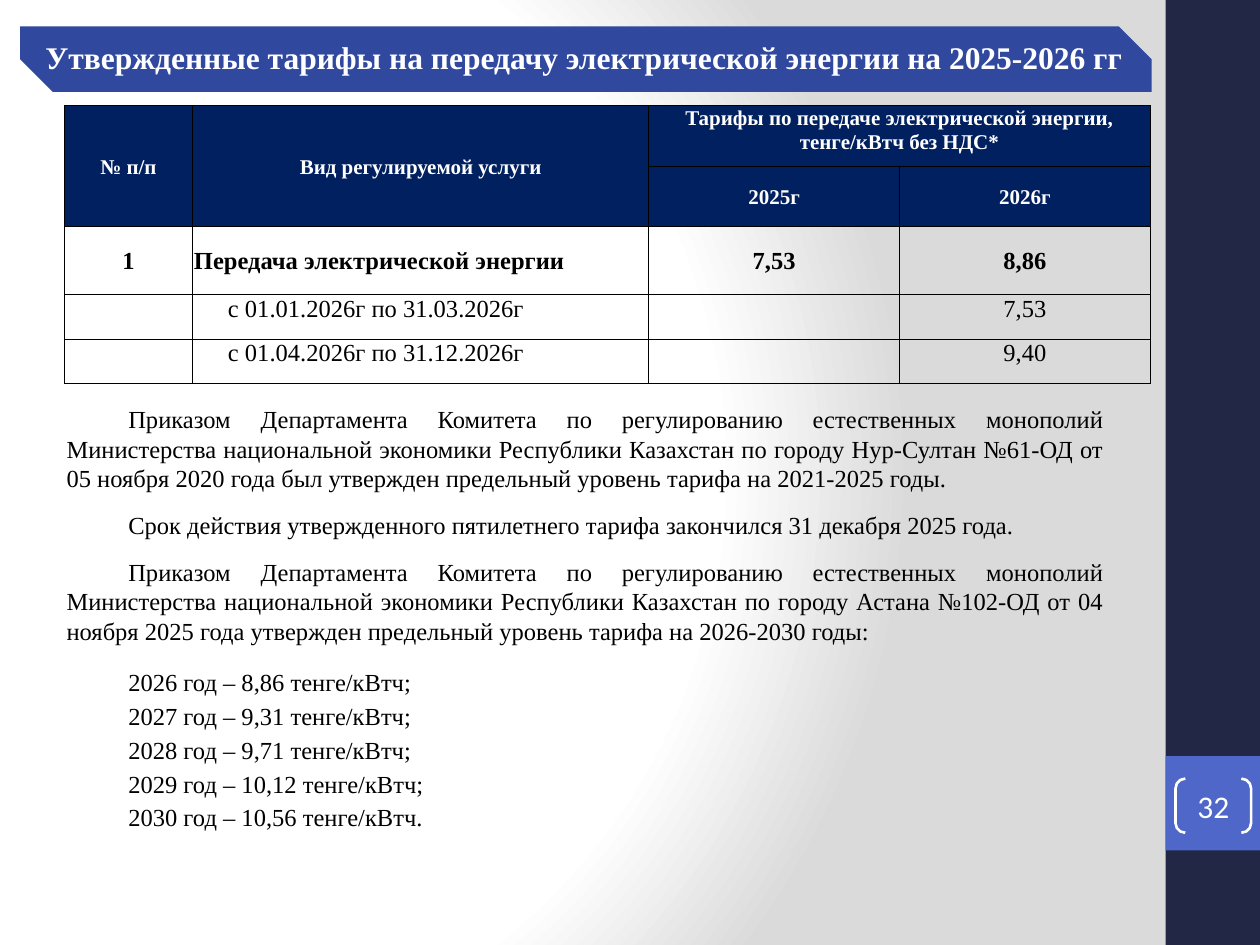
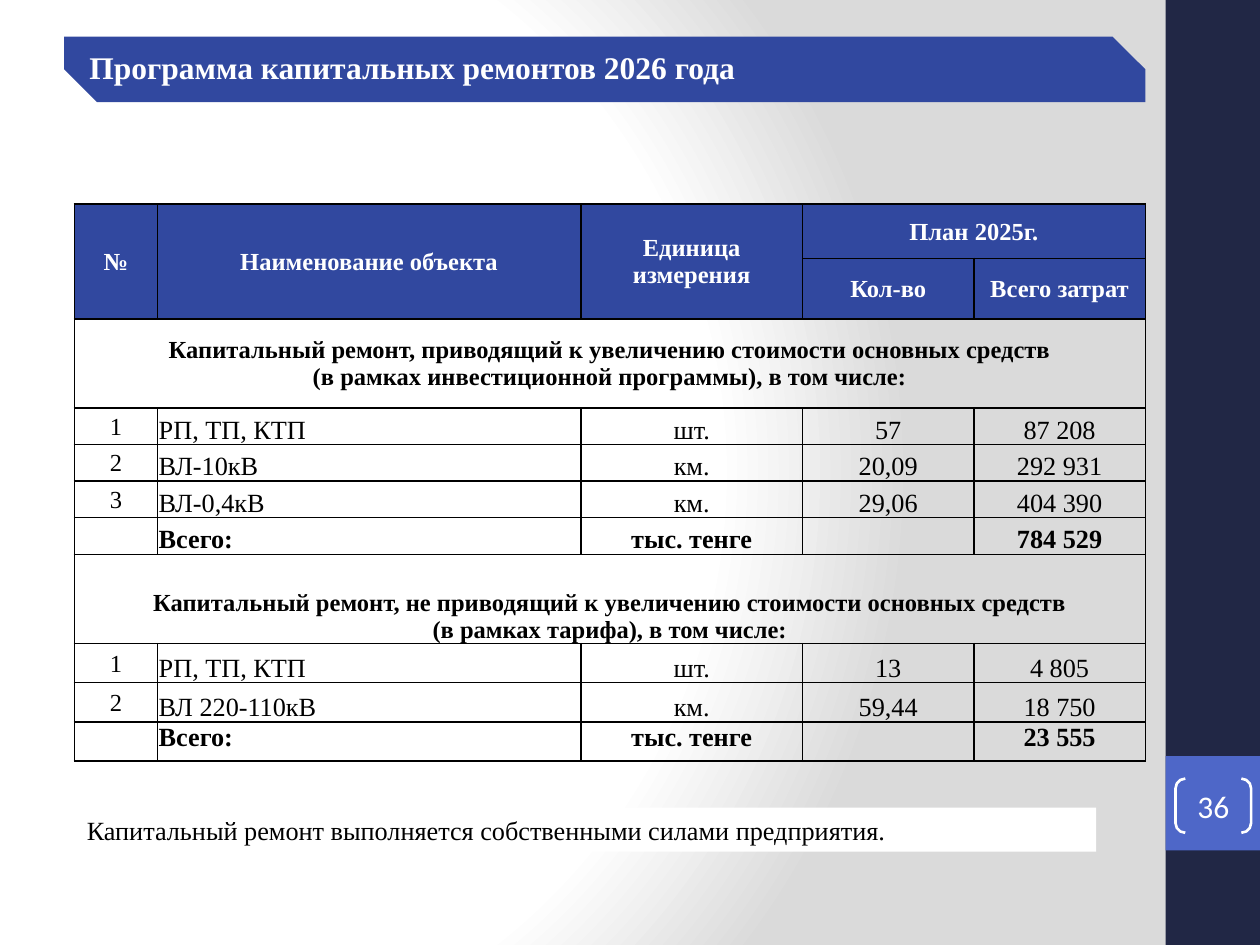
from dataclasses import dataclass
from functools import partial

from lxml.etree import SubElement
from pptx import Presentation
from pptx.dml.color import RGBColor
from pptx.enum.shapes import MSO_SHAPE as Shape
from pptx.enum.text import MSO_ANCHOR as Anchor, PP_ALIGN as Align
from pptx.oxml import parse_xml
from pptx.oxml.ns import nsdecls, qn
from pptx.util import Inches, Pt


@dataclass(frozen=True)
class Theme:
    font: str = "Times New Roman"
    number_font: str = "Calibri"
    white: str = "FFFFFF"
    black: str = "000000"
    shade: str = "DADADA"
    band: str = "212745"
    badge: str = "4E67C8"
    accent: str = "31489F"
    navy: str = "002060"
    title: int = 18
    note: int = 15
    body: int = 14
    small: int = 12


THEME = Theme()


@dataclass(frozen=True)
class Cell:
    text: str = ""
    size: int = THEME.body
    bold: bool = False
    color: str = THEME.black
    fill: str = ""
    align: Align = Align.CENTER
    anchor: Anchor = Anchor.MIDDLE
    left: float = 0.01
    span: tuple = (1, 1)


class Deck:
    def __init__(self, theme):
        self.theme = theme
        self.deck = Presentation()
        self.deck.slide_width, self.deck.slide_height = Inches(10), Inches(7.5)
        self.page = None

    # Page with gradient background, side band and number
    def add_page(self, number):
        theme = self.theme
        self.page = self.deck.slides.add_slide(self.deck.slide_layouts[6])
        stops = ((0, theme.white), (75, theme.white), (100, theme.shade))
        stop_xml = "".join(
            f'<a:gs pos="{pos * 1000}"><a:srgbClr val="{color}"/></a:gs>'
            for pos, color in stops)
        self.page.element.cSld.insert(0, parse_xml(
            f'<p:bg {nsdecls("p", "a")}><p:bgPr><a:gradFill rotWithShape="1">'
            f'<a:gsLst>{stop_xml}</a:gsLst><a:path path="circle">'
            '<a:fillToRect l="20000" t="50000" r="100000" b="50000"/>'
            '</a:path></a:gradFill><a:effectLst/></p:bgPr></p:bg>'))
        self.shape(Shape.RECTANGLE, (9.25, 0, 0.75, 7.5), theme.band)
        self.shape(Shape.RECTANGLE, (9.25, 6, 0.75, 0.75), theme.badge)
        bracket = self.shape(Shape.DOUBLE_BRACKET, (9.33, 6.18, 0.6, 0.43))
        bracket.adjustments[0] = 0.18
        bracket.line.color.rgb = RGBColor.from_string(theme.white)
        bracket.line.width = Pt(1.5)
        self.frame(bracket.text_frame, (0, 0, 0, 0), Anchor.MIDDLE)
        para = bracket.text_frame.paragraphs[0]
        para.alignment = Align.CENTER
        self.span(para, number, theme.title, theme.white, font=theme.number_font)

    def shape(self, kind, area, fill=""):
        box = self.page.shapes.add_shape(kind, *map(Inches, area))
        box.shadow.inherit = False
        box.line.fill.background()
        self.paint(box, fill)
        return box

    def paint(self, target, fill):
        if fill:
            target.fill.solid()
            target.fill.fore_color.rgb = RGBColor.from_string(fill)
        else:
            target.fill.background()

    def frame(self, frame, margins, anchor):
        frame.word_wrap = True
        frame.vertical_anchor = anchor
        (frame.margin_left, frame.margin_top,
         frame.margin_right, frame.margin_bottom) = map(Inches, margins)

    def span(self, para, text, size, color, bold=False, font=None):
        span = para.add_run()
        span.text = text
        span.font.name = font or self.theme.font
        span.font.size = Pt(size)
        span.font.bold = bold
        span.font.color.rgb = RGBColor.from_string(color)

    def title(self, area, text):
        box = self.shape(Shape.SNIP_2_DIAG_RECTANGLE, area, self.theme.accent)
        box.adjustments[0], box.adjustments[1] = 0, 0.5
        self.frame(box.text_frame, (0.07, 0.04, 0.07, 0.04), Anchor.MIDDLE)
        para = box.text_frame.paragraphs[0]
        para.alignment = Align.LEFT
        para.line_spacing = 0.9
        self.span(para, text, self.theme.title, self.theme.white, bold=True)

    def note(self, area, text):
        box = self.shape(Shape.RECTANGLE, area, self.theme.white)
        self.frame(box.text_frame, (0.1, 0.05, 0.1, 0.05), Anchor.TOP)
        para = box.text_frame.paragraphs[0]
        para.alignment = Align.LEFT
        self.span(para, text, self.theme.note, self.theme.black)

    # Justified paragraphs followed by a list of lines
    def body(self, area, passages, lines):
        box = self.page.shapes.add_textbox(*map(Inches, area))
        frame = box.text_frame
        frame.word_wrap = True
        for index, text in enumerate(passages + lines):
            para = frame.add_paragraph() if index else frame.paragraphs[0]
            para.alignment = Align.JUSTIFY
            para._p.get_or_add_pPr().set("indent", str(Inches(0.49)))
            if index < len(passages):
                para.space_after = Pt(10)
            else:
                para.line_spacing = 1.15
            self.span(para, text, self.theme.body, self.theme.black)

    # Table from (height, cells) rows; None marks a merged place
    def table(self, left, top, widths, rows, border):
        heights = [height for height, _ in rows]
        area = (left, top, sum(widths), sum(heights))
        grid = self.page.shapes.add_table(
            len(rows), len(widths), *map(Inches, area)).table
        grid.first_row = grid.horz_banding = False
        for column, width in zip(grid.columns, widths):
            column.width = Inches(width)
        for r, (height, cells) in enumerate(rows):
            grid.rows[r].height = Inches(height)
            for c, cell in enumerate(cells):
                self.borders(grid.cell(r, c), border)
                if cell:
                    self.fill_cell(grid.cell(r, c), cell)
                    if cell.span != (1, 1):
                        down, across = cell.span
                        grid.cell(r, c).merge(
                            grid.cell(r + down - 1, c + across - 1))

    def borders(self, target, width):
        props = target._tc.get_or_add_tcPr()
        for side in ("lnL", "lnR", "lnT", "lnB"):
            line = SubElement(props, qn(f"a:{side}"), w=str(Pt(width)))
            fill = SubElement(line, qn("a:solidFill"))
            SubElement(fill, qn("a:srgbClr"), val=self.theme.black)

    def fill_cell(self, target, cell):
        self.paint(target, cell.fill)
        target.vertical_anchor = cell.anchor
        target.margin_left = Inches(cell.left)
        target.margin_top = target.margin_right = Inches(0.01)
        target.margin_bottom = 0
        frame = target.text_frame
        for index, text in enumerate(cell.text.split("\n")):
            para = frame.add_paragraph() if index else frame.paragraphs[0]
            para.alignment = cell.align
            if text:
                self.span(para, text, cell.size, cell.color, cell.bold)
            else:
                SubElement(para._p, qn("a:endParaRPr"), sz=str(cell.size * 100))


def tariff_page(deck):
    deck.add_page("32")
    order = ("Приказом Департамента Комитета по регулированию естественных "
             "монополий Министерства национальной экономики Республики "
             "Казахстан по городу ")
    limits = {2026: "8,86", 2027: "9,31", 2028: "9,71",
              2029: "10,12", 2030: "10,56"}
    deck.body(
        (0.43, 3.16, 8.43, 4.19),
        [order + "Нур-Султан №61-ОД от 05 ноября 2020 года был утвержден "
                 "предельный уровень тарифа на 2021-2025 годы.",
         "Срок действия утвержденного пятилетнего тарифа закончился "
         "31 декабря 2025 года.",
         order + "Астана №102-ОД от 04 ноября 2025 года утвержден "
                 "предельный уровень тарифа на 2026-2030 годы:"],
        [f"{year} год – {price} тенге/кВтч" + (";" if year < 2030 else ".")
         for year, price in limits.items()])
    deck.title((0.16, 0.21, 8.98, 0.52),
               "Утвержденные тарифы на передачу электрической энергии "
               "на 2025-2026 гг")

    # Tariff table
    head = partial(Cell, size=THEME.small, bold=True, color=THEME.white,
                   fill=THEME.navy)
    strong = partial(Cell, bold=True)
    period = partial(Cell, align=Align.LEFT, anchor=Anchor.TOP, left=0.28)
    price = partial(Cell, anchor=Anchor.TOP)
    rows = [
        (0.48, [head("№ п/п", span=(2, 1)),
                head("Вид регулируемой услуги", span=(2, 1)),
                head("Тарифы по передаче электрической энергии, "
                     "тенге/кВтч без НДС*", anchor=Anchor.TOP, span=(1, 2)),
                None]),
        (0.48, [None, None, head("2025г"), head("2026г")]),
        (0.54, [strong("1"),
                strong("Передача электрической энергии", align=Align.LEFT),
                strong("7,53"), strong("8,86")]),
    ]
    for dates, value in (("с 01.01.2026г по 31.03.2026г", "7,53"),
                         ("с 01.04.2026г по 31.12.2026г", "9,40")):
        rows.append((0.35, [Cell(), period(dates), Cell(), price(value)]))
    deck.table(0.51, 0.84, (1.02, 3.62, 1.99, 1.99), rows, border=0.5)


def repair_page(deck):
    deck.add_page("36")
    deck.note((0.59, 6.41, 8.11, 0.35),
              "Капитальный ремонт выполняется собственными силами предприятия.")

    # Repair table
    head = partial(Cell, bold=True, color=THEME.white, fill=THEME.accent)

    def section(text, anchor):
        cell = Cell(text, bold=True, anchor=anchor, span=(1, 5))
        return 0.71, [cell, None, None, None, None]

    def entry(height, number, name, *values, bold=False, anchor=Anchor.BOTTOM):
        item = partial(Cell, size=THEME.note, bold=bold, anchor=anchor)
        cells = [item(value) if value else Cell() for value in values]
        return height, [Cell(number), item(name, align=Align.LEFT), *cells]

    def total(height, cost, anchor=Anchor.BOTTOM):
        return entry(height, "", "Всего:", "тыс. тенге", "", cost,
                     bold=True, anchor=anchor)

    rows = [
        (0.43, [*(head(text, span=(2, 1)) for text in
                  ("№", "Наименование объекта", "Единица измерения")),
                head("План 2025г.", span=(1, 2)), None]),
        (0.48, [None, None, None, head("Кол-во"), head("Всего затрат")]),
        section("Капитальный ремонт, приводящий к увеличению стоимости "
                "основных средств\n(в рамках инвестиционной программы), "
                "в том числе:", Anchor.MIDDLE),
        entry(0.29, "1", "РП, ТП, КТП", "шт.", "57", "87 208"),
        entry(0.29, "2", "ВЛ-10кВ", "км.", "20,09", "292 931"),
        entry(0.29, "3", "ВЛ-0,4кВ", "км.", "29,06", "404 390"),
        total(0.29, "784 529"),
        section("Капитальный ремонт, не приводящий к увеличению стоимости "
                "основных средств\n(в рамках тарифа), в том числе:",
                Anchor.BOTTOM),
        entry(0.31, "1", "РП, ТП, КТП", "шт.", "13", "4 805"),
        entry(0.31, "2", "ВЛ 220-110кВ", "км.", "59,44", "18 750"),
        total(0.31, "23 555", Anchor.TOP),
    ]
    deck.table(0.59, 1.62, (0.66, 3.36, 1.76, 1.36, 1.36), rows, border=1)
    deck.title((0.51, 0.29, 8.58, 0.52),
               "Программа капитальных ремонтов 2026 года")


def main():
    deck = Deck(THEME)
    tariff_page(deck)
    repair_page(deck)
    deck.deck.save("out.pptx")


if __name__ == "__main__":
    main()
